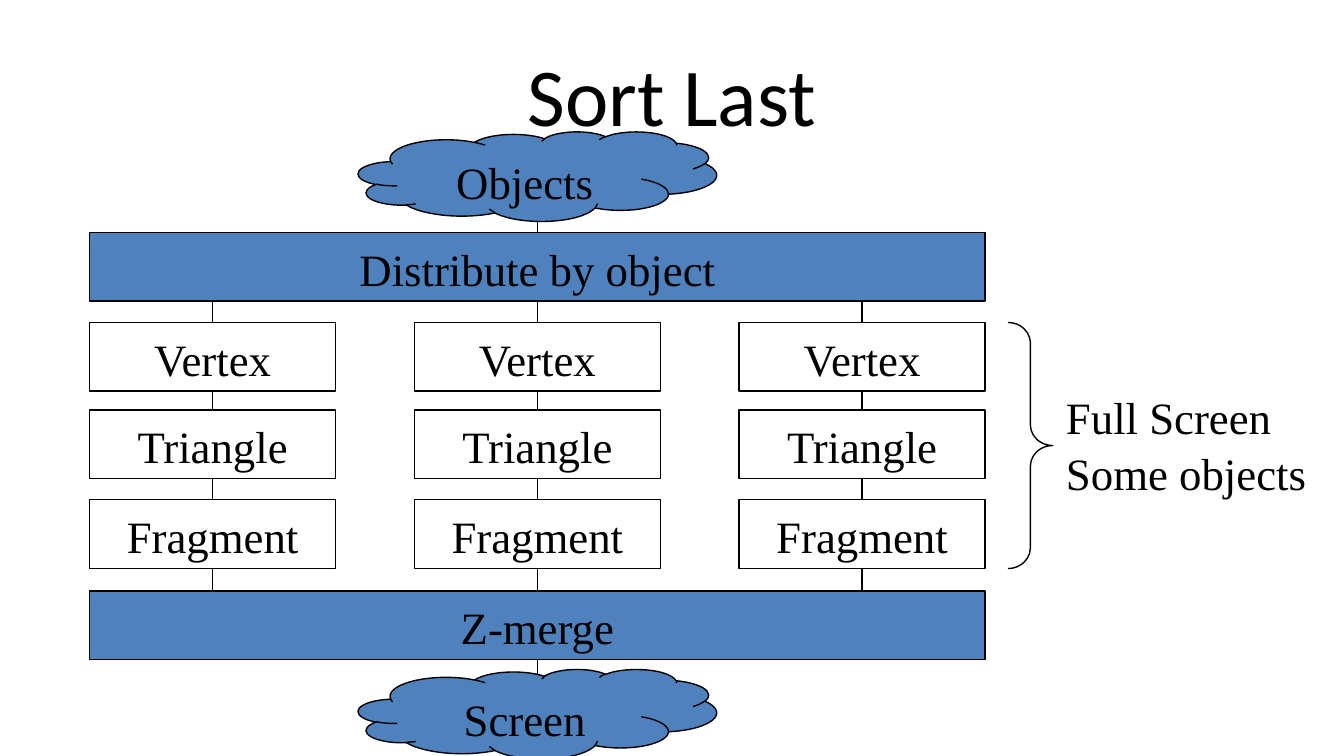
"""Build the Sort Last rendering pipeline slide."""
import pptx
import pptx.util
import pptx.dml.color
import pptx.enum.shapes
import pptx.enum.text
import pptx.oxml
import pptx.oxml.ns

Pt = pptx.util.Pt
SHAPES = pptx.enum.shapes.MSO_SHAPE
ANCHOR = pptx.enum.text.MSO_ANCHOR
ALIGN = pptx.enum.text.PP_ALIGN

COLORS = {"ink": "000000", "accent": "4F81BD"}
TITLE = "Sort Last"
STAGES = [("Vertex", 172.8), ("Triangle", 219.6), ("Fragment", 267.8)]
BARS = [("Distribute by object", 124.6), ("Z-merge", 316.6)]
CLOUDS = [("Objects", 70.5), ("Screen", 358.5)]
NOTE = ["Full Screen", "Some objects"]

LEFT, BAR_WIDTH, BOX_WIDTH, BOX_HEIGHT = 48, 479.8, 131.9, 36.8
COLUMN_COUNT = 3
COLUMN_STEP = (BAR_WIDTH - BOX_WIDTH) / (COLUMN_COUNT - 1)
CENTER = LEFT + BAR_WIDTH / 2
CLOUD_WIDTH, CLOUD_HEIGHT = 192, 48

presentation = pptx.Presentation()
presentation.slide_width, presentation.slide_height = Pt(720), Pt(405)
slide = presentation.slides.add_slide(presentation.slide_layouts[6])


def rgb(name):
    return pptx.dml.color.RGBColor.from_string(COLORS[name])


def write_text(shape, lines, size=24, font="Times New Roman", align=ALIGN.CENTER,
               anchor=ANCHOR.TOP, wrap=True, spacing=1.05):
    frame = shape.text_frame
    frame.word_wrap = wrap
    frame.vertical_anchor = anchor
    frame.text = "\n".join(lines)
    for paragraph in frame.paragraphs:
        paragraph.alignment = align
        paragraph.line_spacing = spacing
        paragraph.font.size = Pt(size)
        paragraph.font.name = font
        paragraph.font.color.rgb = rgb("ink")


def add_shape(kind, left, top, width, height, fill=None):
    shape = slide.shapes.add_shape(kind, Pt(left), Pt(top), Pt(width), Pt(height))
    shape.shadow.inherit = False
    if fill:
        shape.fill.solid()
        shape.fill.fore_color.rgb = rgb(fill)
    else:
        shape.fill.background()
    shape.line.color.rgb = rgb("ink")
    shape.line.width = Pt(0.75)
    return shape


def add_line(x, top, bottom, arrow=False):
    line = slide.shapes.add_connector(
        pptx.enum.shapes.MSO_CONNECTOR.STRAIGHT, Pt(x), Pt(top), Pt(x), Pt(bottom))
    line.line.color.rgb = rgb("ink")
    line.line.width = Pt(0.75)
    properties = line.element.spPr
    if arrow:
        outline = properties.find(pptx.oxml.ns.qn("a:ln"))
        head = pptx.oxml.parse_xml(
            f'<a:tailEnd {pptx.oxml.ns.nsdecls("a")} type="triangle"/>')
        outline.append(head)
    properties.append(pptx.oxml.parse_xml(f'<a:effectLst {pptx.oxml.ns.nsdecls("a")}/>'))


def add_text(lines, left, top, width, height, **text_format):
    box = slide.shapes.add_textbox(Pt(left), Pt(top), Pt(width), Pt(height))
    write_text(box, lines, **text_format)


for column in range(COLUMN_COUNT):
    left = LEFT + column * COLUMN_STEP
    for label, top in STAGES:
        box = add_shape(SHAPES.RECTANGLE, left, top, BOX_WIDTH, BOX_HEIGHT)
        write_text(box, [label], anchor=ANCHOR.MIDDLE)
    tops = [BARS[0][1], *(top for label, top in STAGES), BARS[1][1]]
    for above, below in zip(tops, tops[1:]):
        add_line(left + BOX_WIDTH / 2, above + BOX_HEIGHT, below)

add_line(CENTER, 100.8, BARS[0][1])
add_line(CENTER, BARS[1][1] + BOX_HEIGHT, 373.7, arrow=True)

for label, top in BARS:
    bar = add_shape(SHAPES.RECTANGLE, LEFT, top, BAR_WIDTH, BOX_HEIGHT, fill="accent")
    write_text(bar, [label])

first_top, last_top = STAGES[0][1], STAGES[-1][1]
brace = add_shape(SHAPES.RIGHT_BRACE, 540, first_top, 24, last_top + BOX_HEIGHT - first_top)
brace.adjustments[0] = 0.46
brace.adjustments[1] = 0.5
add_text(NOTE, 564, 203.8, 144, 65.5, align=ALIGN.LEFT, wrap=False)

for label, top in CLOUDS:
    cloud = add_shape(SHAPES.CLOUD, CENTER - CLOUD_WIDTH / 2, top,
                      CLOUD_WIDTH, CLOUD_HEIGHT, fill="accent")
    write_text(cloud, [label])

add_text([TITLE], 36, 16.6, 648, 67.7, size=44, font="Calibri",
         anchor=ANCHOR.MIDDLE, spacing=1)

presentation.save("out.pptx")
